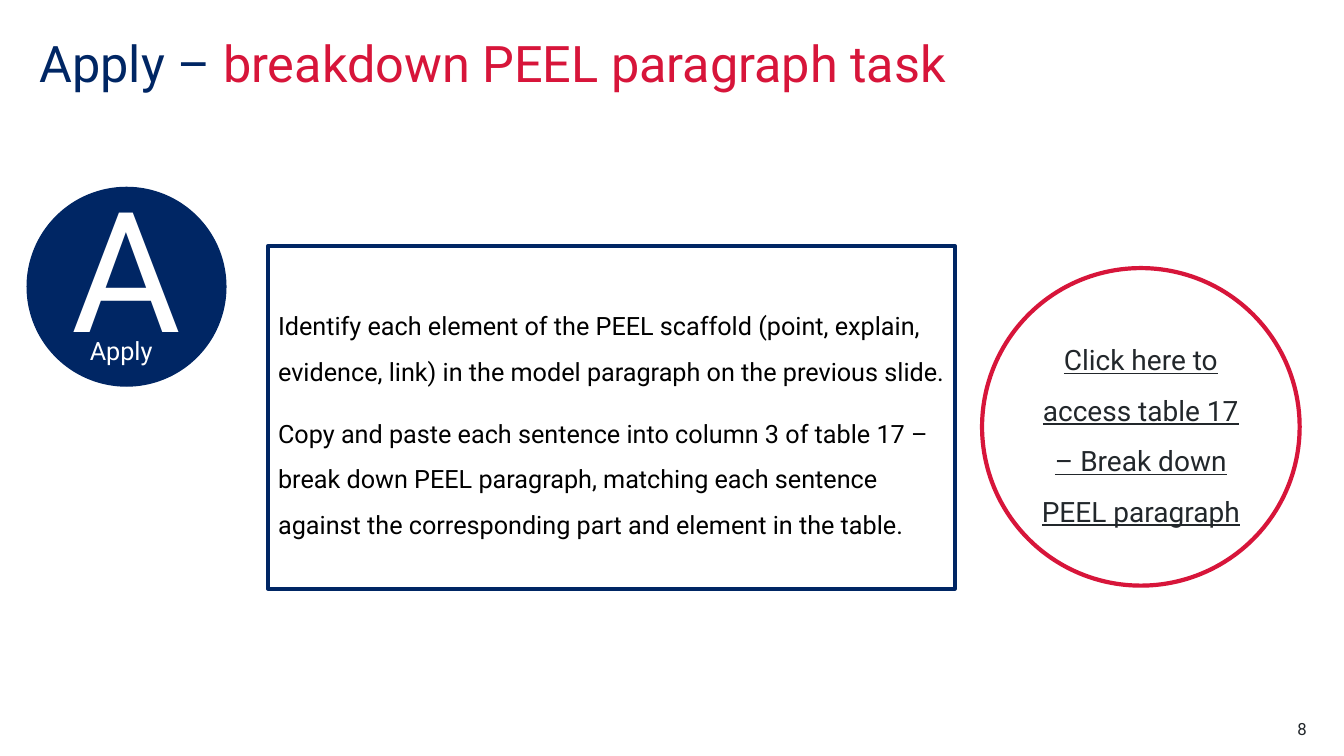
from pptx import Presentation
from pptx.dml.color import RGBColor
from pptx.enum.shapes import MSO_SHAPE
from pptx.enum.text import MSO_ANCHOR, PP_ALIGN
from pptx.util import Inches, Pt

NAVY = RGBColor(0x00, 0x26, 0x64)
RED = RGBColor(0xD7, 0x15, 0x3A)
WHITE = RGBColor(0xFF, 0xFF, 0xFF)
BLACK = RGBColor(0x00, 0x00, 0x00)
CHARCOAL = RGBColor(0x22, 0x27, 0x2B)

deck = Presentation()
deck.slide_width, deck.slide_height = Inches(13.33), Inches(7.5)
slide = deck.slides.add_slide(deck.slide_layouts[6])


def add_panel(preset, place, fill, line, weight):
    panel = slide.shapes.add_shape(preset, *map(Inches, place))
    panel.shadow.inherit = False
    panel.fill.solid()
    panel.fill.fore_color.rgb = fill
    panel.line.color.rgb = line
    panel.line.width = Pt(weight)
    frame = panel.text_frame
    frame.word_wrap = True
    frame.vertical_anchor = MSO_ANCHOR.MIDDLE
    return frame


def write(frame, paragraphs, size, color, align=PP_ALIGN.LEFT, spacing=1.0):
    """Fill a frame with paragraphs that share one style."""
    for index, text in enumerate(paragraphs):
        para = frame.add_paragraph() if index else frame.paragraphs[0]
        para.add_run().text = text
        para.alignment = align
        para.line_spacing = spacing
        if index:
            para.space_before = Pt(12)
        para.font.name = "Roboto"
        para.font.size = Pt(size)
        para.font.color.rgb = color


badge = add_panel(MSO_SHAPE.OVAL, (0.27, 1.86, 1.97, 1.97), NAVY, NAVY, 1)
badge.margin_bottom = Inches(0.48)  # lifts the letter above its caption
write(badge, ["A"], 120, WHITE, PP_ALIGN.CENTER)

task = add_panel(MSO_SHAPE.RECTANGLE, (2.66, 2.44, 6.81, 3.4), WHITE, NAVY, 3)
write(task, [
    "Identify each element of the PEEL scaffold (point, explain, evidence, link) "
    "in the model paragraph on the previous slide.",
    "Copy and paste each sentence into column 3 of table 17 – break down PEEL "
    "paragraph, matching each sentence against the corresponding part and element "
    "in the table.",
], 18, BLACK, spacing=1.5)

button = add_panel(MSO_SHAPE.OVAL, (9.74, 2.66, 3.15, 3.15), WHITE, RED, 3)
write(button, ["Click here to access table 17 – Break down PEEL paragraph"],
      20, CHARCOAL, PP_ALIGN.CENTER, 1.5)
button.paragraphs[0].font.underline = True

labels = [
    ((0.39, 0.39, 11.02, 1.1), "Apply – ", 36, NAVY, PP_ALIGN.LEFT, 0.9),
    ((0.89, 3.33, 0.72, 0.48), "Apply", 18, WHITE, PP_ALIGN.LEFT, 1.0),
    ((12.17, 7.13, 0.79, 0.2), "8", 12, CHARCOAL, PP_ALIGN.RIGHT, 1.0),
]
for place, text, size, color, align, spacing in labels:
    box = slide.shapes.add_textbox(*map(Inches, place))
    frame = box.text_frame
    frame.word_wrap = True
    frame.margin_left = frame.margin_right = 0
    frame.margin_top = frame.margin_bottom = 0
    write(frame, [text], size, color, align, spacing)
    if size == 36:
        span = frame.paragraphs[0].add_run()
        span.text = "breakdown PEEL paragraph task"
        span.font.color.rgb = RED

deck.save("out.pptx")
